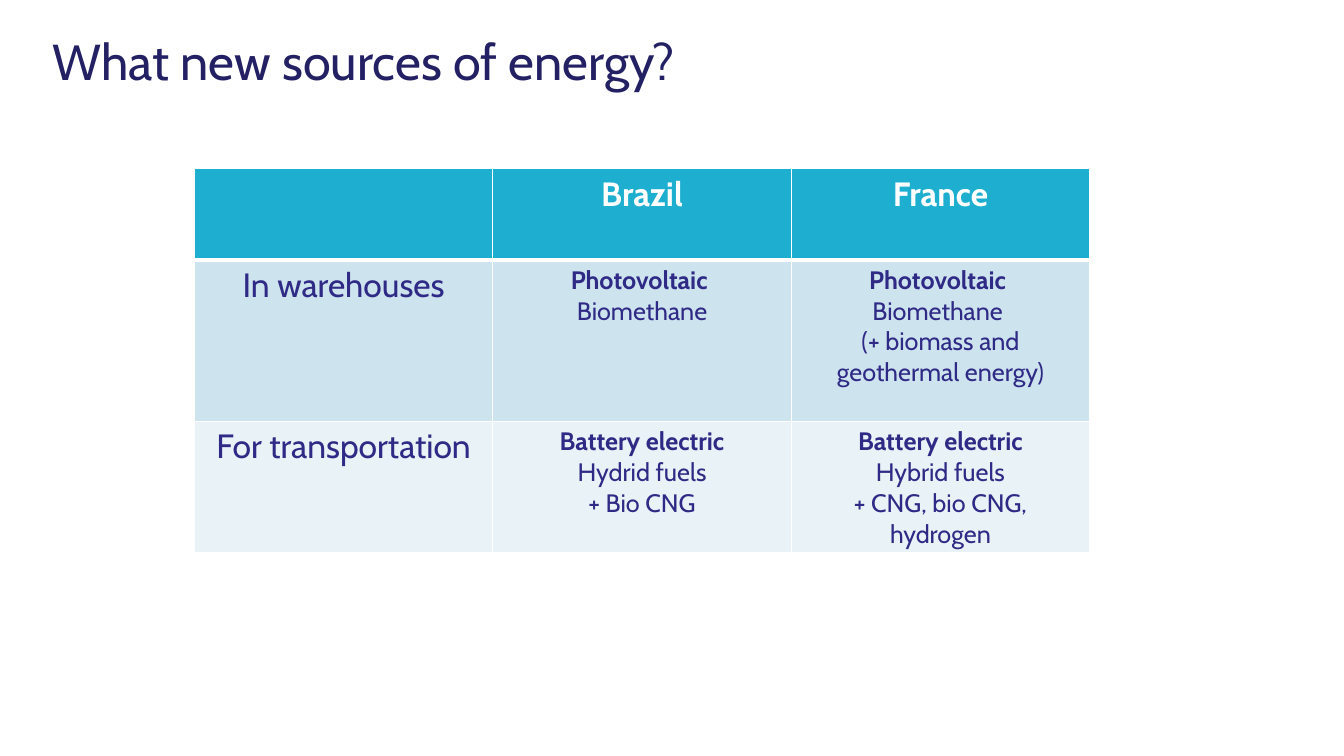
from dataclasses import dataclass

from lxml import etree
from pptx import Presentation
from pptx.dml.color import RGBColor
from pptx.enum.text import PP_ALIGN
from pptx.oxml.ns import qn
from pptx.util import Cm, Pt

CENTER = PP_ALIGN.CENTER


@dataclass(frozen=True)
class Theme:
    font: str = "Cabin"
    title: str = "232064"
    ink: str = "2F2A85"
    white: str = "FFFFFF"
    head: str = "1EAFD0"
    bands: tuple[str, ...] = ("CDE3EE", "E8F2F7")
    title_size: int = 36
    label_size: int = 24
    body_size: int = 18
    thin: int = 1
    thick: int = 3


@dataclass(frozen=True)
class Line:
    text: str
    size: int
    color: str
    bold: bool = False


@dataclass(frozen=True)
class Row:
    height: float
    fill: str
    cells: tuple[tuple[Line, ...], ...]
    top: int
    bottom: int


THEME = Theme()


def head(text: str) -> tuple[Line, ...]:
    return (Line(text, THEME.label_size, THEME.white, True),)


def label(text: str) -> tuple[Line, ...]:
    return (Line(text, THEME.label_size, THEME.ink),)


def energy(main: str, *others: str) -> tuple[Line, ...]:
    """Main source in bold, the others below it in regular type."""
    return (Line(main, THEME.body_size, THEME.ink, True),
            *(Line(text, THEME.body_size, THEME.ink) for text in others))


ROWS = (
    Row(2.3, THEME.head, ((), head("Brazil"), head("France")),
        THEME.thin, THEME.thick),
    Row(4.07, THEME.bands[0], (
        label("In warehouses"),
        energy("Photovoltaic ", "Biomethane"),
        energy("Photovoltaic ", "Biomethane ",
               "(+ biomass and geothermal energy)"),
    ), THEME.thick, THEME.thin),
    Row(3.3, THEME.bands[1], (
        label("For transportation"),
        energy("Battery electric", "Hydrid fuels", "+ Bio CNG"),
        energy("Battery electric", "Hybrid fuels",
               "+ CNG, bio CNG, hydrogen"),
    ), THEME.thin, THEME.thin),
)
COL_WIDTH = 7.52


def write(para, line: Line) -> None:
    run = para.add_run()
    run.text = line.text
    font = run.font
    font.name = THEME.font
    font.size = Pt(line.size)
    font.bold = line.bold
    font.color.rgb = RGBColor.from_string(line.color)


def add_borders(cell, top: int, bottom: int) -> None:
    props = cell._tc.get_or_add_tcPr()
    sides = {"lnL": THEME.thin, "lnR": THEME.thin, "lnT": top, "lnB": bottom}
    for side, width in sides.items():
        edge = etree.SubElement(props, qn(f"a:{side}"), w=str(Pt(width)))
        fill = etree.SubElement(edge, qn("a:solidFill"))
        etree.SubElement(fill, qn("a:srgbClr"), val=THEME.white)


def fill_cell(cell, lines: tuple[Line, ...], row: Row) -> None:
    add_borders(cell, row.top, row.bottom)
    cell.fill.solid()
    cell.fill.fore_color.rgb = RGBColor.from_string(row.fill)
    frame = cell.text_frame
    for i, line in enumerate(lines):
        para = frame.add_paragraph() if i else frame.paragraphs[0]
        para.alignment = CENTER
        write(para, line)


def add_title(slide, text: str) -> None:
    box = slide.shapes.add_textbox(Cm(1.07), Cm(0.64), Cm(30.28), Cm(1.8))
    box.text_frame.word_wrap = True
    write(box.text_frame.paragraphs[0],
          Line(text, THEME.title_size, THEME.title))


def add_grid(slide, rows: tuple[Row, ...]) -> None:
    count = len(rows[0].cells)
    table = slide.shapes.add_table(
        len(rows), count, Cm(4.9), Cm(4.25), Cm(COL_WIDTH * count),
        Cm(sum(row.height for row in rows))).table
    for col in table.columns:
        col.width = Cm(COL_WIDTH)
    for r, row in enumerate(rows):
        table.rows[r].height = Cm(row.height)
        for c, lines in enumerate(row.cells):
            fill_cell(table.cell(r, c), lines, row)


def main() -> None:
    deck = Presentation()
    deck.slide_width, deck.slide_height = Cm(33.87), Cm(19.05)
    slide = deck.slides.add_slide(deck.slide_layouts[6])
    add_title(slide, "What new sources of energy?")
    add_grid(slide, ROWS)
    deck.save("out.pptx")


if __name__ == "__main__":
    main()
